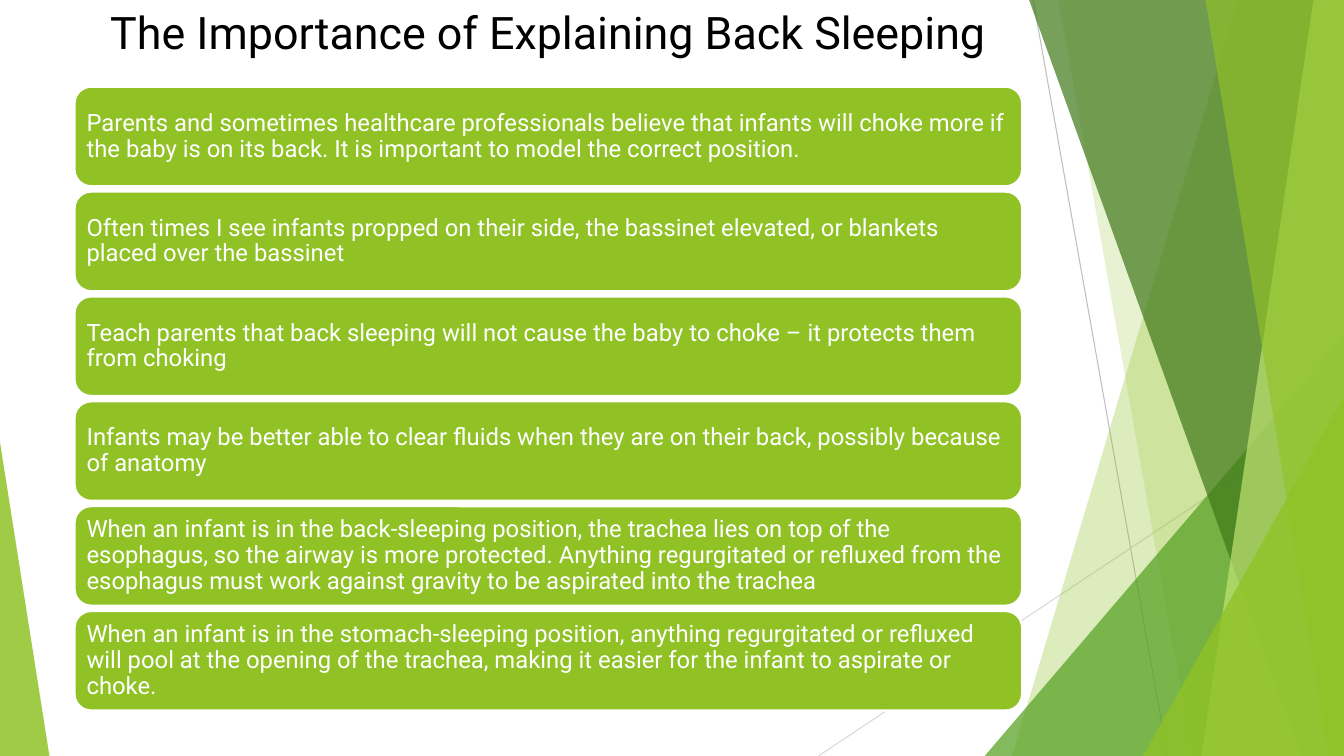
from lxml.etree import SubElement
from pptx import Presentation
from pptx.dml.color import RGBColor
from pptx.enum.shapes import MSO_CONNECTOR, MSO_SHAPE
from pptx.enum.text import MSO_ANCHOR as ANCHOR, PP_ALIGN as ALIGN
from pptx.oxml.ns import qn
from pptx.util import Pt

WIDTH, HEIGHT = 960, 540
LIME = RGBColor(0x90, 0xC2, 0x26)
PALE_LIME = RGBColor(0xC0, 0xE4, 0x74)
GREEN = RGBColor(0x54, 0xA0, 0x21)
DARK_GREEN = RGBColor(0x3F, 0x78, 0x19)
GREY = RGBColor(0xBF, 0xBF, 0xBF)
LIGHT_GREY = RGBColor(0xD9, 0xD9, 0xD9)
WHITE = RGBColor(0xFF, 0xFF, 0xFF)
BLACK = RGBColor(0, 0, 0)

TITLE = "The Importance of Explaining Back Sleeping"
POINTS = [
    "Parents and sometimes healthcare professionals believe that infants will choke more if "
    "the baby is on its back. It is important to model the correct position.",
    "Often times I see infants propped on their side, the bassinet elevated, or blankets "
    "placed over the bassinet",
    "Teach parents that back sleeping will not cause the baby to choke – it protects them "
    "from choking",
    "Infants may be better able to clear fluids when they are on their back, possibly because "
    "of anatomy",
    "When an infant is in the back-sleeping position, the trachea lies on top of the "
    "esophagus, so the airway is more protected. Anything regurgitated or refluxed from the "
    "esophagus must work against gravity to be aspirated into the trachea",
    "When an infant is in the stomach-sleeping position, anything regurgitated or refluxed "
    "will pool at the opening of the trachea, making it easier for the infant to aspirate or "
    "choke.",
]
LEFT, CONTENT_WIDTH = 53.3, 676.8
CARD_TOP, CARD_HEIGHT, CARD_PITCH = 62, 71, 74.9


class SlideBuilder:
    font = "Roboto"

    def __init__(self, slide):
        self.shapes = slide.shapes

    def line(self, x1, y1, x2, y2, color):
        cxn = self.shapes.add_connector(MSO_CONNECTOR.STRAIGHT, Pt(x1), Pt(y1), Pt(x2), Pt(y2))
        cxn.line.color.rgb = color
        cxn.line.width = Pt(0.75)
        SubElement(cxn._element.spPr, qn("a:effectLst"))

    def tint(self, sp, color, opacity):
        """Fill a shape with a see-through colour and drop its outline."""
        sp.shadow.inherit = False
        sp.fill.solid()
        sp.fill.fore_color.rgb = color
        sp.line.fill.background()
        clr = sp._element.spPr.find(qn("a:solidFill"))[0]
        SubElement(clr, qn("a:alpha"), val=str(opacity * 1000))

    def ray(self, top_x, bottom_x, color, opacity):
        """Draw a full-height band from a slanted left edge to the slide's right edge."""
        builder = self.shapes.build_freeform(Pt(top_x), 0)
        corners = [(WIDTH, 0), (WIDTH, HEIGHT), (bottom_x, HEIGHT)]
        builder.add_line_segments([(Pt(x), Pt(y)) for x, y in corners], close=True)
        self.tint(builder.convert_to_shape(), color, opacity)

    def triangle(self, x, y, w, apex, color, opacity):
        """Draw a triangle that stands on the slide's bottom edge."""
        sp = self.shapes.add_shape(MSO_SHAPE.ISOSCELES_TRIANGLE,
                                   Pt(x), Pt(y), Pt(w), Pt(HEIGHT - y))
        sp.adjustments[0] = apex
        self.tint(sp, color, opacity)

    def set_text(self, sp, text, size, color, align, anchor):
        tf = sp.text_frame
        tf.text = text
        tf.word_wrap = True
        tf.vertical_anchor = anchor
        p = tf.paragraphs[0]
        p.alignment = align
        r = p.runs[0]
        r.font.name = self.font
        r.font.size = Pt(size)
        r.font.color.rgb = color
        return tf

    def title(self, text):
        sp = self.shapes.add_textbox(Pt(LEFT), 0, Pt(CONTENT_WIDTH), Pt(78.5))
        self.set_text(sp, text, 32, BLACK, ALIGN.CENTER, ANCHOR.TOP)

    def card(self, y, text):
        sp = self.shapes.add_shape(MSO_SHAPE.ROUNDED_RECTANGLE, Pt(LEFT), Pt(y),
                                   Pt(CONTENT_WIDTH), Pt(CARD_HEIGHT))
        sp.shadow.inherit = False
        sp.fill.solid()
        sp.fill.fore_color.rgb = LIME
        sp.line.color.rgb = WHITE
        sp.line.width = Pt(1.5)
        tf = self.set_text(sp, text, 17, WHITE, ALIGN.LEFT, ANCHOR.MIDDLE)
        tf.margin_left = tf.margin_right = tf.margin_top = tf.margin_bottom = Pt(5.1)
        tf.paragraphs[0].line_spacing = 0.9


def main():
    prs = Presentation()
    prs.slide_width, prs.slide_height = Pt(WIDTH), Pt(HEIGHT)
    page = SlideBuilder(prs.slides.add_slide(prs.slide_layouts[6]))

    page.line(738, 0, 834, HEIGHT, GREY)
    page.line(WIDTH, 290, 584.6, HEIGHT, LIGHT_GREY)
    page.ray(884.2, 722.9, LIME, 30)
    page.ray(756, 851.8, LIME, 20)
    page.triangle(703.4, 239.8, 256.6, 1, GREEN, 72)
    page.ray(735.1, 929.5, DARK_GREEN, 70)
    page.ray(938.2, 858.2, PALE_LIME, 70)
    page.ray(861.1, 949, LIME, 65)
    page.triangle(816.5, 283, 143.5, 1, LIME, 80)
    page.triangle(0, 316, 35.3, 0, LIME, 85)

    page.title(TITLE)
    for i, text in enumerate(POINTS):
        page.card(CARD_TOP + i * CARD_PITCH, text)

    prs.save("out.pptx")


if __name__ == "__main__":
    main()
